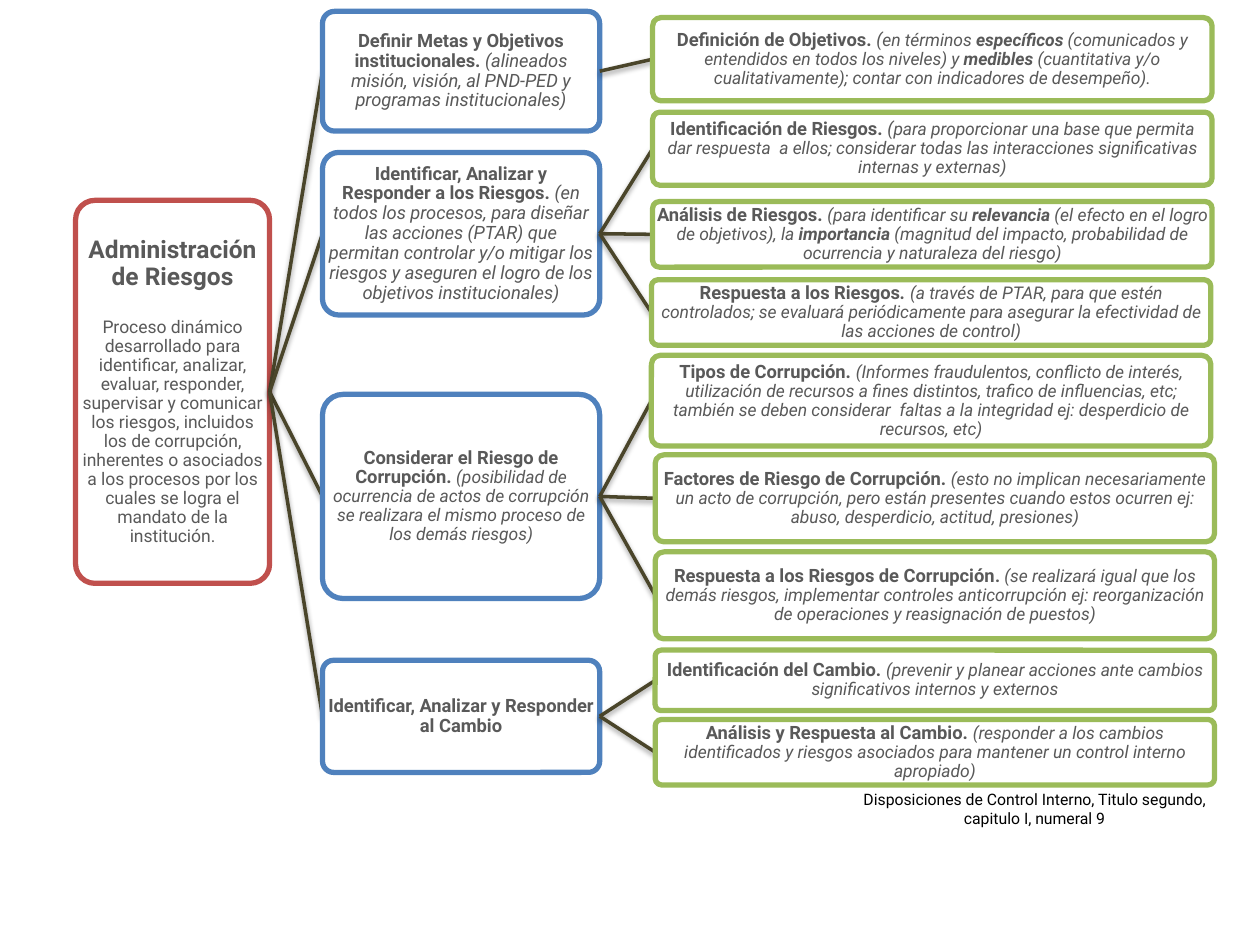
from lxml import etree
from pptx import Presentation
from pptx.dml.color import RGBColor
from pptx.enum.shapes import MSO_CONNECTOR as CONNECTOR, MSO_SHAPE as SHAPE
from pptx.enum.text import MSO_ANCHOR as ANCHOR, MSO_AUTO_SIZE as AUTO_SIZE, PP_ALIGN as ALIGN
from pptx.oxml.ns import qn
from pptx.util import Emu, Pt

PX = 9144  # 100 px to the inch
FONT = "Roboto"
WHITE = RGBColor(0xFF, 0xFF, 0xFF)
BLACK = RGBColor(0x00, 0x00, 0x00)
GRAY = RGBColor(0x59, 0x59, 0x59)
RED = RGBColor(0xC0, 0x50, 0x4D)
BLUE = RGBColor(0x4F, 0x81, 0xBD)
GREEN = RGBColor(0x9B, 0xBB, 0x59)
OLIVE = RGBColor(0x4A, 0x45, 0x2A)
LEFT_SITE, RIGHT_SITE = 1, 3

BRANCH_LEFT, BRANCH_WIDTH = 256, 220
DETAIL_WIDTH = 444


def px(value):
    return Emu(value * PX)


def head(text, size=10.5):
    return text, size, True, False


def note(text, size=10):
    return text, size, False, True


def key(text):
    return text, 10, True, True


ROOT_TEXT = [
    [head("Administración de Riesgos", 14)],
    [("Proceso dinámico desarrollado para identificar, analizar, evaluar, responder, "
      "supervisar y comunicar los riesgos, incluidos los de corrupción, inherentes o "
      "asociados a los procesos por los cuales se logra el mandato de la institución.",
      10, False, False)],
]

# Branch: top, height, runs, details. Detail: left, top, height, runs.
BRANCHES = [
    (9, 95, [
        head("Definir Metas y Objetivos institucionales. "),
        note("(alineados misión, visión, al PND-PED y programas institucionales)", 10.5),
    ], [
        (518, 14, 66, [
            head("Definición de Objetivos. "), note("(", 10.5), note("en términos "),
            key("específicos"),
            note(" (comunicados y entendidos en todos los niveles) y "), key("medibles "),
            note("(cuantitativa y/o cualitativamente); contar con indicadores de desempeño)."),
        ]),
    ]),
    (121, 129, [
        head("Identificar, Analizar y Responder a los Riesgos. "),
        note("(en todos los procesos, para diseñar las acciones (PTAR) que permitan controlar "
             "y/o mitigar los riesgos y aseguren el logro de los objetivos institucionales)",
             10.5),
    ], [
        (518, 89, 58, [
            head("Identificación de Riesgos. "), note("(", 10.5),
            note("para proporcionar una base que permita dar respuesta  a ellos; considerar "
                 "todas las interacciones significativas internas y externas)"),
        ]),
        (518, 160, 52, [
            head("Análisis de Riesgos. "), note("(para identificar su "), key("relevancia"),
            note(" (el efecto en el logro de objetivos), la "), key("importancia "),
            note("(magnitud del impacto, probabilidad de ocurrencia y naturaleza del riesgo)"),
        ]),
        (517, 222, 52, [
            head("Respuesta a los Riesgos"), (". ", 10.5, True, True),
            note("(a través de PTAR, para que estén controlados; se evaluará periódicamente "
                 "para asegurar la efectividad de las acciones de control)"),
        ]),
    ]),
    (313, 162, [
        head("Considerar el Riesgo de Corrupción. "),
        note("(posibilidad de ocurrencia de actos de corrupción se realizara el mismo "
             "proceso de los demás riesgos)"),
    ], [
        (517, 282, 72, [
            head("Tipos de Corrupción. "),
            note("(Informes fraudulentos, conflicto de interés, utilización de recursos a "
                 "fines distintos, trafico de influencias, etc; también se deben considerar  "
                 "faltas a la integridad ej: desperdicio de recursos, etc)"),
        ]),
        (520, 361, 69, [
            head("Factores de Riesgo de Corrupción."), head(" ", 10),
            note("(esto no implican necesariamente un acto de corrupción, pero están "
                 "presentes cuando estos ocurren ej: abuso, desperdicio, actitud, presiones)"),
        ]),
        (520, 438, 69, [
            head("Respuesta a los Riesgos de Corrupción"), head(". ", 10),
            note("(se realizará igual que los demás riesgos, implementar controles "
                 "anticorrupción ej: reorganización de operaciones y reasignación de puestos)"),
        ]),
    ]),
    (524, 89, [head("Identificar, Analizar y Responder al Cambio")], [
        (520, 516, 48, [
            head("Identificación del Cambio. "),
            note("(prevenir y planear acciones ante cambios significativos internos y externos"),
        ]),
        (520, 571, 52, [
            head("Análisis y Respuesta al Cambio. "),
            note("(responder a los cambios identificados y riesgos asociados para mantener "
                 "un control interno apropiado)"),
        ]),
    ]),
]


class Diagram:
    def __init__(self, slide):
        self.slide = slide
        self.shapes = slide.shapes

    def add_runs(self, paragraph, runs, color):
        paragraph.alignment = ALIGN.CENTER
        for text, size, bold, italic in runs:
            run = paragraph.add_run()
            run.text = text
            font = run.font
            font.name, font.size = FONT, Pt(size)
            font.bold, font.italic = bold, italic
            font.color.rgb = color

    def node(self, left, top, width, height, color, paragraphs):
        box = self.shapes.add_shape(
            SHAPE.ROUNDED_RECTANGLE, px(left), px(top), px(width), px(height))
        box.adjustments[0] = 0.1
        box.shadow.inherit = False
        box.fill.solid()
        box.fill.fore_color.rgb = WHITE
        box.line.color.rgb = color
        box.line.width = Pt(3)
        frame = box.text_frame
        frame.word_wrap = True
        frame.vertical_anchor = ANCHOR.MIDDLE
        frame.margin_left = frame.margin_right = px(1)
        frame.margin_top = frame.margin_bottom = px(1)
        for index, runs in enumerate(paragraphs):
            paragraph = frame.add_paragraph() if index else frame.paragraphs[0]
            paragraph.line_spacing = 0.9
            if index:
                paragraph.space_before = Pt(16)
            self.add_runs(paragraph, runs, GRAY)
        return box

    def link(self, parent, child):
        """Join parent's right side to child's left side, beneath the child."""
        line = self.shapes.add_connector(CONNECTOR.STRAIGHT, 0, 0, 0, 0)
        line.begin_connect(parent, RIGHT_SITE)
        line.end_connect(child, LEFT_SITE)
        line.line.color.rgb = OLIVE
        line.line.width = Pt(2)
        effects = etree.SubElement(line._element.spPr, qn("a:effectLst"))
        shadow = etree.SubElement(
            effects, qn("a:outerShdw"), blurRad=str(Pt(3.1)), dist=str(Pt(1.6)),
            dir="5400000", rotWithShape="0")
        shade = etree.SubElement(shadow, qn("a:srgbClr"), val=str(BLACK))
        etree.SubElement(shade, qn("a:alpha"), val="38000")
        child._element.addprevious(line._element)

    def caption(self, left, top, width, height, text):
        box = self.shapes.add_textbox(px(left), px(top), px(width), px(height))
        frame = box.text_frame
        frame.word_wrap = True
        frame.auto_size = AUTO_SIZE.SHAPE_TO_FIT_TEXT
        self.add_runs(frame.paragraphs[0], [(text, 9, False, False)], BLACK)


def main():
    deck = Presentation()
    deck.slide_width, deck.slide_height = px(1000), px(750)
    diagram = Diagram(deck.slides.add_slide(deck.slide_layouts[6]))

    root = diagram.node(60, 159, 154, 304, RED, ROOT_TEXT)
    for top, height, runs, details in BRANCHES:
        branch = diagram.node(BRANCH_LEFT, top, BRANCH_WIDTH, height, BLUE, [runs])
        diagram.link(root, branch)
        for left, detail_top, detail_height, detail_runs in details:
            detail = diagram.node(
                left, detail_top, DETAIL_WIDTH, detail_height, GREEN, [detail_runs])
            diagram.link(branch, detail)

    diagram.caption(669, 622, 304, 40,
                    "Disposiciones de Control Interno, Titulo segundo, capitulo I, numeral 9")
    deck.save("out.pptx")


if __name__ == "__main__":
    main()
